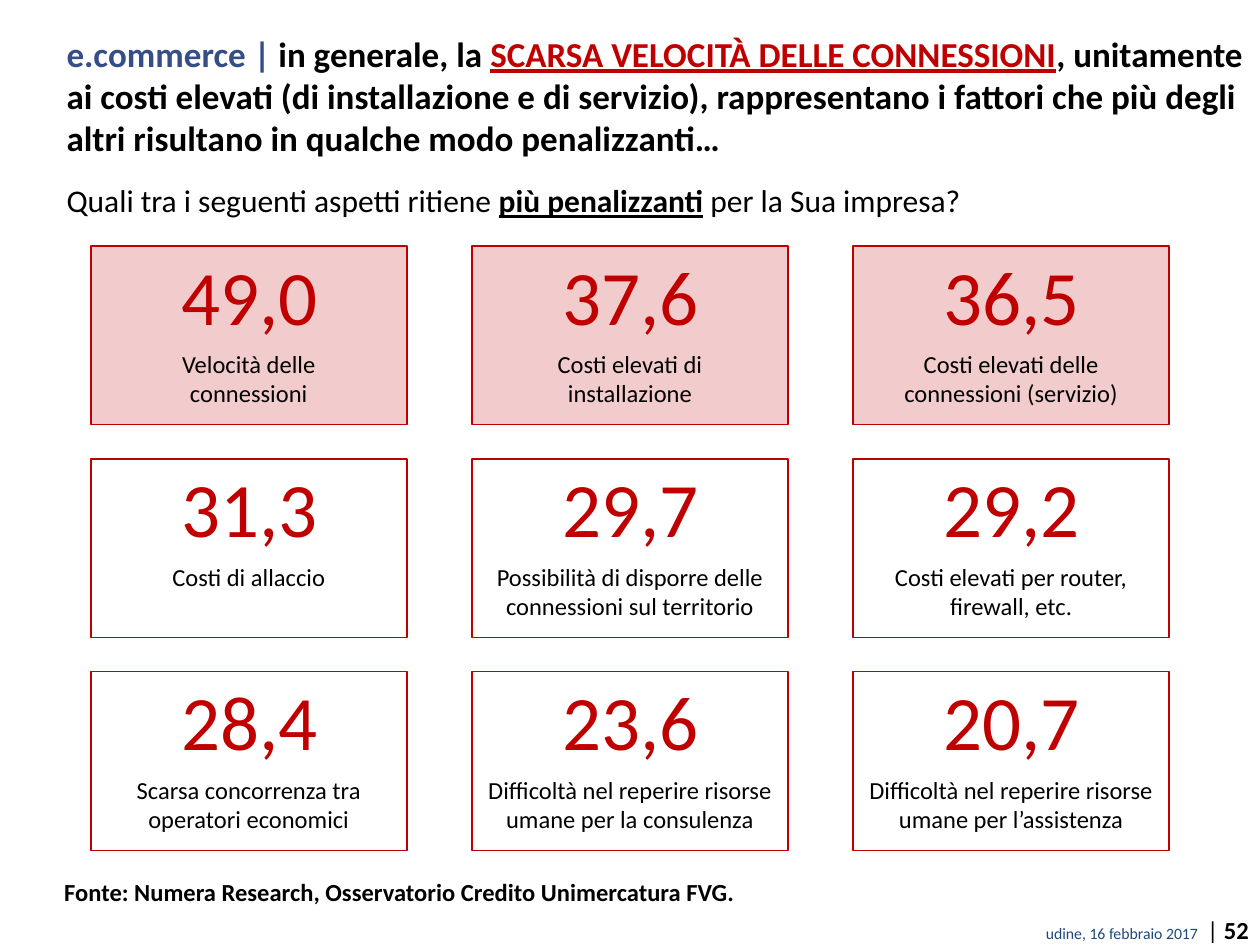
from lxml import etree
from pptx import Presentation
from pptx.dml.color import RGBColor
from pptx.enum.shapes import MSO_SHAPE
from pptx.enum.text import MSO_ANCHOR, PP_ALIGN
from pptx.oxml.ns import qn
from pptx.util import Inches, Pt

RECTANGLE = MSO_SHAPE.RECTANGLE
TOP = MSO_ANCHOR.TOP
LEFT, CENTER, RIGHT, JUSTIFY = (
    PP_ALIGN.LEFT, PP_ALIGN.CENTER, PP_ALIGN.RIGHT, PP_ALIGN.JUSTIFY)

FONT = "Calibri"
RED, BLACK, BLUE, NAVY = "C00000", "000000", "364E88", "1F497D"

CARD_LEFT, CARD_TOP = 0.72, 1.95
CARD_WIDTH, CARD_HEIGHT = 2.51, 1.42
COLUMN_STEP, ROW_STEP = 3.025, 1.69
NUMBER_WIDTH = 1.29
WIDE, NARROW = 2.5, 2.06

# Each card: percentage, label, label width, highlighted
CARDS = [
    [("49,0", "Velocità delle connessioni", NARROW, True),
     ("37,6", "Costi elevati di installazione", NARROW, True),
     ("36,5", "Costi elevati delle connessioni (servizio)", WIDE, True)],
    [("31,3", "Costi di allaccio", WIDE, False),
     ("29,7", "Possibilità di disporre delle connessioni sul territorio", WIDE, False),
     ("29,2", "Costi elevati per router, firewall, etc.", WIDE, False)],
    [("28,4", "Scarsa concorrenza tra operatori economici", WIDE, False),
     ("23,6", "Difficoltà nel reperire risorse umane per la consulenza", WIDE, False),
     ("20,7", "Difficoltà nel reperire risorse umane per l’assistenza", WIDE, False)],
]


def color(hex_code):
    return RGBColor.from_string(hex_code)


def add_run(para, text, size, hex_code=BLACK, bold=False, underline=False):
    span = para.add_run()
    span.text = text
    font = span.font
    font.name, font.size = FONT, Pt(size)
    font.bold, font.underline = bold, underline
    font.color.rgb = color(hex_code)


def add_text(page, left, top, width, height, align=LEFT, wrap=True):
    """Add an empty text box and return its paragraph."""
    box = page.shapes.add_textbox(
        Inches(left), Inches(top), Inches(width), Inches(height))
    frame = box.text_frame
    frame.word_wrap = wrap
    frame.vertical_anchor = TOP
    para = frame.paragraphs[0]
    para.alignment = align
    return para


def set_opacity(fill_shape, percent):
    fill_color = fill_shape._element.spPr.find(qn("a:solidFill"))[0]
    alpha = etree.SubElement(fill_color, qn("a:alpha"))
    alpha.set("val", str(percent * 1000))


def add_card(page, left, top, number, label, label_width, highlighted):
    card = page.shapes.add_shape(
        RECTANGLE, Inches(left), Inches(top), Inches(CARD_WIDTH), Inches(CARD_HEIGHT))
    card.shadow.inherit = False
    card.line.color.rgb = color(RED)
    card.line.width = Pt(1)
    if highlighted:
        card.fill.solid()
        card.fill.fore_color.rgb = color(RED)
        set_opacity(card, 20)
    else:
        card.fill.background()

    middle = left + CARD_WIDTH / 2
    para = add_text(page, middle - NUMBER_WIDTH / 2, top - 0.03,
                    NUMBER_WIDTH, 0.84, RIGHT, wrap=False)
    add_run(para, number, 44, RED)
    para = add_text(page, middle - label_width / 2, top + 0.77,
                    label_width, 0.57, CENTER)
    add_run(para, label, 14)


def add_title(page):
    para = add_text(page, 0.43, 0.21, 9.57, 0.84)
    add_run(para, "e.commerce | ", 20, BLUE, bold=True)
    add_run(para, "in generale, la ", 20, bold=True)
    add_run(para, "SCARSA VELOCITÀ DELLE CONNESSIONI", 20, RED, bold=True, underline=True)
    add_run(para, ", unitamente ai costi elevati (di installazione e di servizio), "
            "rappresentano i fattori che più degli altri risultano in qualche modo "
            "penalizzanti…", 20, bold=True)


def add_question(page):
    para = add_text(page, 0.43, 1.39, 9.21, 0.4, JUSTIFY)
    add_run(para, "Quali tra i seguenti aspetti ritiene ", 18)
    add_run(para, "più penalizzanti", 18, bold=True, underline=True)
    add_run(para, " per la Sua impresa?", 18)


def add_source(page):
    para = add_text(page, 0.43, 6.84, 9.09, 0.41)
    para.line_spacing = 1.3
    frame_margin = Inches(0.08)
    frame = page.shapes[-1].text_frame
    frame.margin_left = frame.margin_right = frame_margin
    add_run(para, "Fonte: Numera Research, Osservatorio Credito Unimercatura FVG.",
            14, bold=True)


def add_footer(page):
    para = add_text(page, 3.08, 7.21, 6.93, 0.33, RIGHT)
    add_run(para, "udine, 16 febbraio 2017 ", 9, NAVY)
    add_run(para, " | ", 14)
    add_run(para, "52", 14, bold=True)


def main():
    deck = Presentation()
    deck.slide_width, deck.slide_height = Inches(10), Inches(7.5)
    page = deck.slides.add_slide(deck.slide_layouts[6])
    add_title(page)
    add_question(page)
    for row, cards in enumerate(CARDS):
        for column, card in enumerate(cards):
            add_card(page, CARD_LEFT + column * COLUMN_STEP,
                     CARD_TOP + row * ROW_STEP, *card)
    add_source(page)
    add_footer(page)
    deck.save("out.pptx")


if __name__ == "__main__":
    main()
